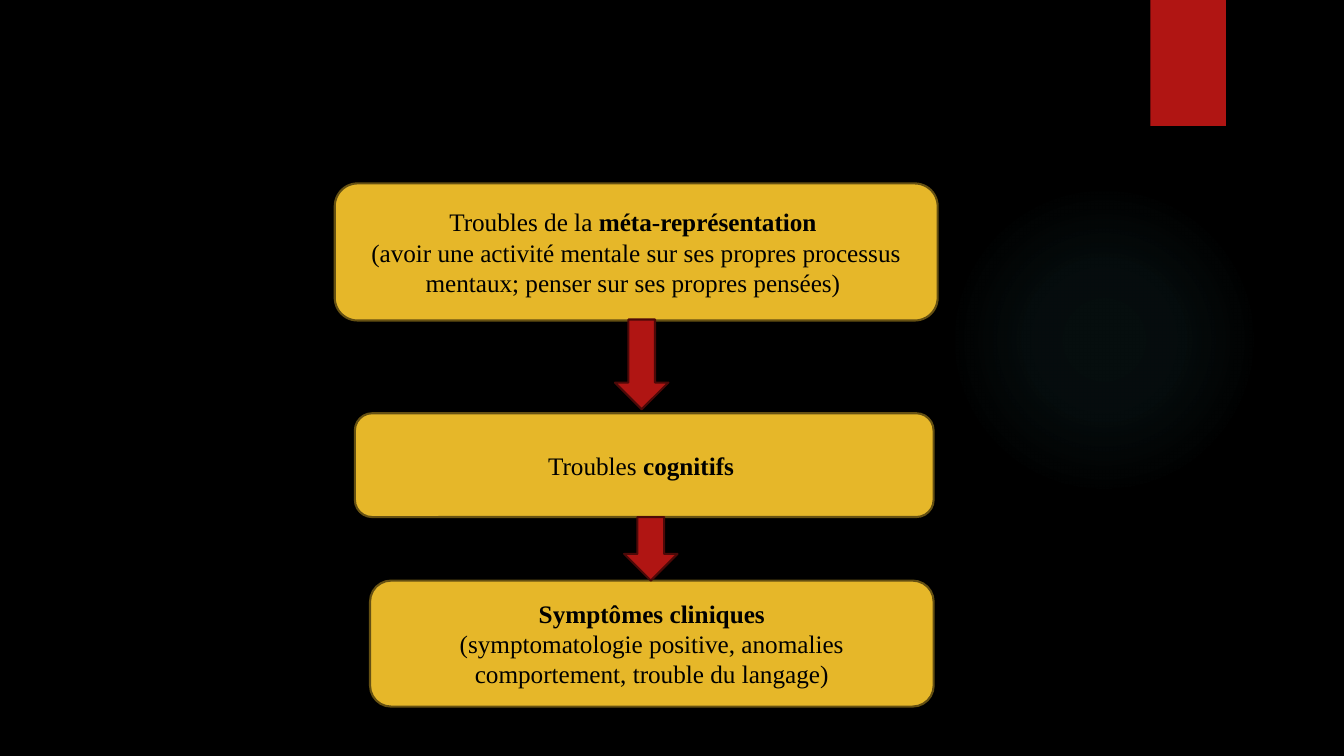
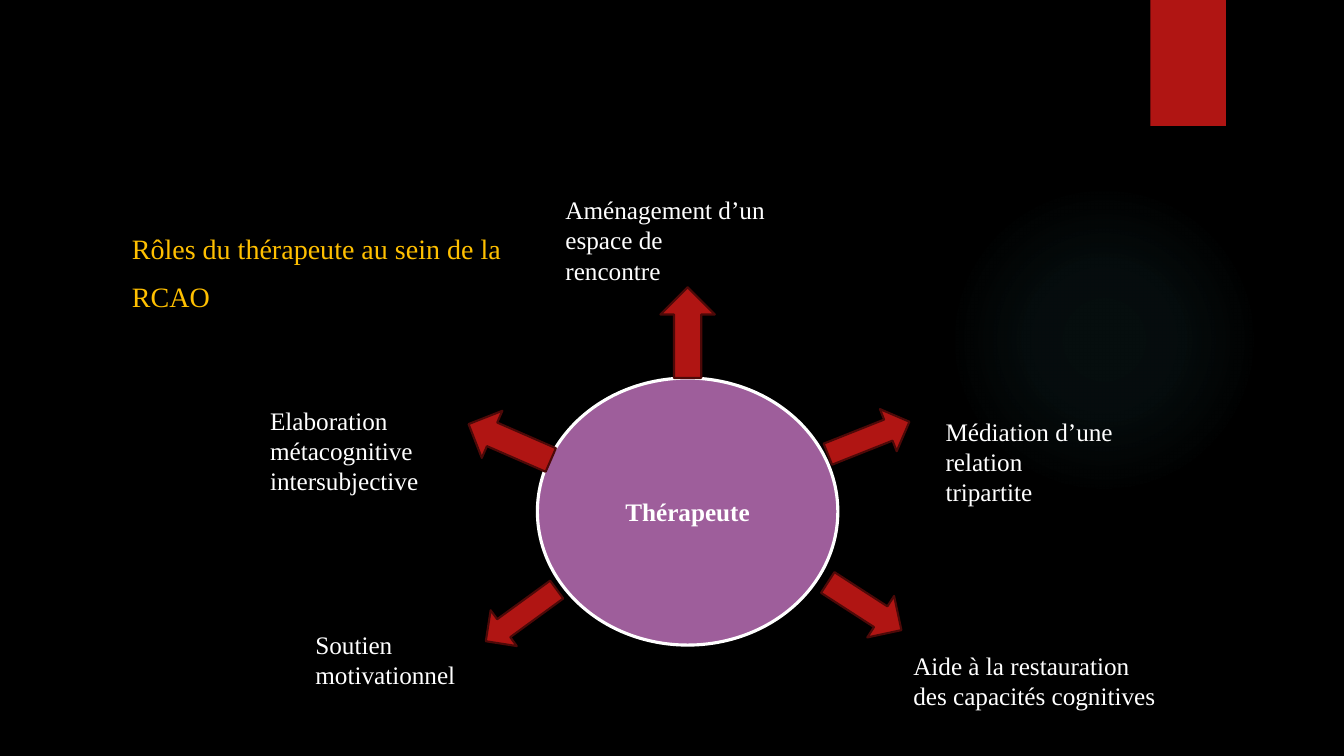
from lxml import etree
from pptx import Presentation
from pptx.dml.color import RGBColor
from pptx.enum.shapes import MSO_SHAPE as Shape
from pptx.enum.text import MSO_ANCHOR as Anchor, PP_ALIGN as Align
from pptx.oxml import parse_xml
from pptx.oxml.ns import nsdecls
from pptx.util import Inches, Pt

FONT = "Times New Roman"
BLACK = RGBColor(0x00, 0x00, 0x00)
WHITE = RGBColor(0xFF, 0xFF, 0xFF)
RED = RGBColor(0xB0, 0x15, 0x13)
DARK_RED = RGBColor(0x4D, 0x09, 0x08)
YELLOW = RGBColor(0xE6, 0xB7, 0x29)
DARK_YELLOW = RGBColor(0x65, 0x50, 0x12)
PURPLE = RGBColor(0x9E, 0x5E, 0x9B)
GOLD = RGBColor(0xFF, 0xC0, 0x00)
TEAL = RGBColor(0x50, 0xB9, 0xC1)
GLOW_STOPS = [(0, 7), (36, 6), (69, 0)]  # position %, opacity %

# Cascade: (left, top, width, height), paragraphs of (text, bold) runs
CASCADE = [
    ((3.32, 1.82, 5.98, 1.36), [
        [("Troubles de la ", False), ("méta-représentation ", True)],
        [("(avoir une activité mentale sur ses propres processus mentaux; "
          "penser sur ses propres pensées) ", False)]]),
    ((3.52, 4.1, 5.74, 1.03), [
        [("Troubles ", False), ("cognitifs ", True)]]),
    ((3.67, 5.76, 5.59, 1.25), [
        [("Symptômes cliniques", True)],
        [("(symptomatologie positive, anomalies comportement, "
          "trouble du langage)", False)]]),
]
DOWN_ARROWS = [(6.1, 3.17, 0.53, 0.89), (6.19, 5.13, 0.53, 0.63)]

# Therapist wheel: label place, lines, arrow place, arrow rotation
HEADING = ["Rôles du thérapeute au sein de la", "RCAO"]
ROLES = [
    ((5.51, 1.88, 2.26, 1.01), ["Aménagement d’un", "espace de", "rencontre"],
     (6.55, 2.85, 0.54, 0.9), 0),
    ((9.28, 4.08, 1.94, 1.01), ["Médiation d’une", "relation", "tripartite"],
     (8.39, 3.91, 0.45, 0.87), 68.3),
    ((8.96, 6.4, 3.6, 0.71), ["Aide à la restauration", "des capacités cognitives"],
     (8.33, 5.58, 0.49, 0.87), 122.9),
    ((3.03, 6.19, 1.7, 0.71), ["Soutien", "motivationnel"],
     (4.95, 5.67, 0.44, 0.87), 233.9),
    ((2.58, 3.97, 2.25, 1.01), ["Elaboration", "métacognitive", "intersubjective"],
     (4.8, 3.94, 0.51, 0.89), 293.6),
]


def add_shape(slide, kind, place, fill, line=None, line_width=1.5):
    shape = slide.shapes.add_shape(kind, *map(Inches, place))
    shape.shadow.inherit = False
    shape.fill.solid()
    shape.fill.fore_color.rgb = fill
    if line is None:
        shape.line.fill.background()
    else:
        shape.line.color.rgb = line
        shape.line.width = Pt(line_width)
    return shape


def write(shape, paragraphs, color, size=18, align=Align.LEFT, anchor=Anchor.TOP,
          gap=0):
    frame = shape.text_frame
    frame.word_wrap = True
    frame.vertical_anchor = anchor
    for index, runs in enumerate(paragraphs):
        para = frame.add_paragraph() if index else frame.paragraphs[0]
        para.alignment = align
        if index and gap:
            para.space_before = Pt(gap)
        for text, bold in runs:
            span = para.add_run()
            span.text = text
            span.font.name = FONT
            span.font.size = Pt(size)
            span.font.bold = bold
            span.font.color.rgb = color


def add_label(slide, place, lines, color, **style):
    box = slide.shapes.add_textbox(*map(Inches, place))
    write(box, [[(line, False)] for line in lines], color, **style)


def add_arrow(slide, kind, place, rotation=0):
    arrow = add_shape(slide, kind, place, RED, DARK_RED)
    arrow.rotation = rotation


def add_glow(slide):
    glow = add_shape(slide, Shape.OVAL, (9.41, 1.83, 3.08, 3.08), TEAL)
    stops = "".join(
        f'<a:gs pos="{position * 1000}"><a:srgbClr val="{TEAL}">'
        f'<a:alpha val="{opacity * 1000}"/></a:srgbClr></a:gs>'
        for position, opacity in GLOW_STOPS)
    gradient = parse_xml(
        f'<a:gradFill {nsdecls("a")} rotWithShape="1"><a:gsLst>{stops}</a:gsLst>'
        '<a:path path="circle"><a:fillToRect l="50000" t="50000" r="50000" '
        'b="50000"/></a:path></a:gradFill>')
    for element in glow.element.spPr:
        if etree.QName(element).localname == "solidFill":
            glow.element.spPr.replace(element, gradient)
            break


def new_slide(deck):
    """Blank slide with the shared black ground, glow and red tab."""
    slide = deck.slides.add_slide(deck.slide_layouts[6])
    slide.background.fill.solid()
    slide.background.fill.fore_color.rgb = BLACK
    add_glow(slide)
    add_shape(slide, Shape.RECTANGLE, (11.41, 0, 0.75, 1.25), RED)
    return slide


def build_cascade(deck):
    slide = new_slide(deck)
    for place, paragraphs in CASCADE:
        box = add_shape(slide, Shape.ROUNDED_RECTANGLE, place, YELLOW, DARK_YELLOW)
        write(box, paragraphs, BLACK, align=Align.CENTER, anchor=Anchor.MIDDLE)
    for place in DOWN_ARROWS:
        add_arrow(slide, Shape.DOWN_ARROW, place)


def build_wheel(deck):
    slide = new_slide(deck)
    add_label(slide, (1.21, 2.25, 4.2, 1.1), HEADING, GOLD, size=20, gap=10)
    hub = add_shape(slide, Shape.OVAL, (5.33, 3.75, 2.98, 2.65), PURPLE, WHITE, 2.25)
    write(hub, [[("Thérapeute", True)]], WHITE, align=Align.CENTER,
          anchor=Anchor.MIDDLE)
    for label_place, lines, arrow_place, rotation in ROLES:
        add_arrow(slide, Shape.UP_ARROW, arrow_place, rotation)
        add_label(slide, label_place, lines, WHITE)


def main():
    deck = Presentation()
    deck.slide_width, deck.slide_height = Inches(13.33), Inches(7.5)
    build_cascade(deck)
    build_wheel(deck)
    deck.save("out.pptx")


if __name__ == "__main__":
    main()
